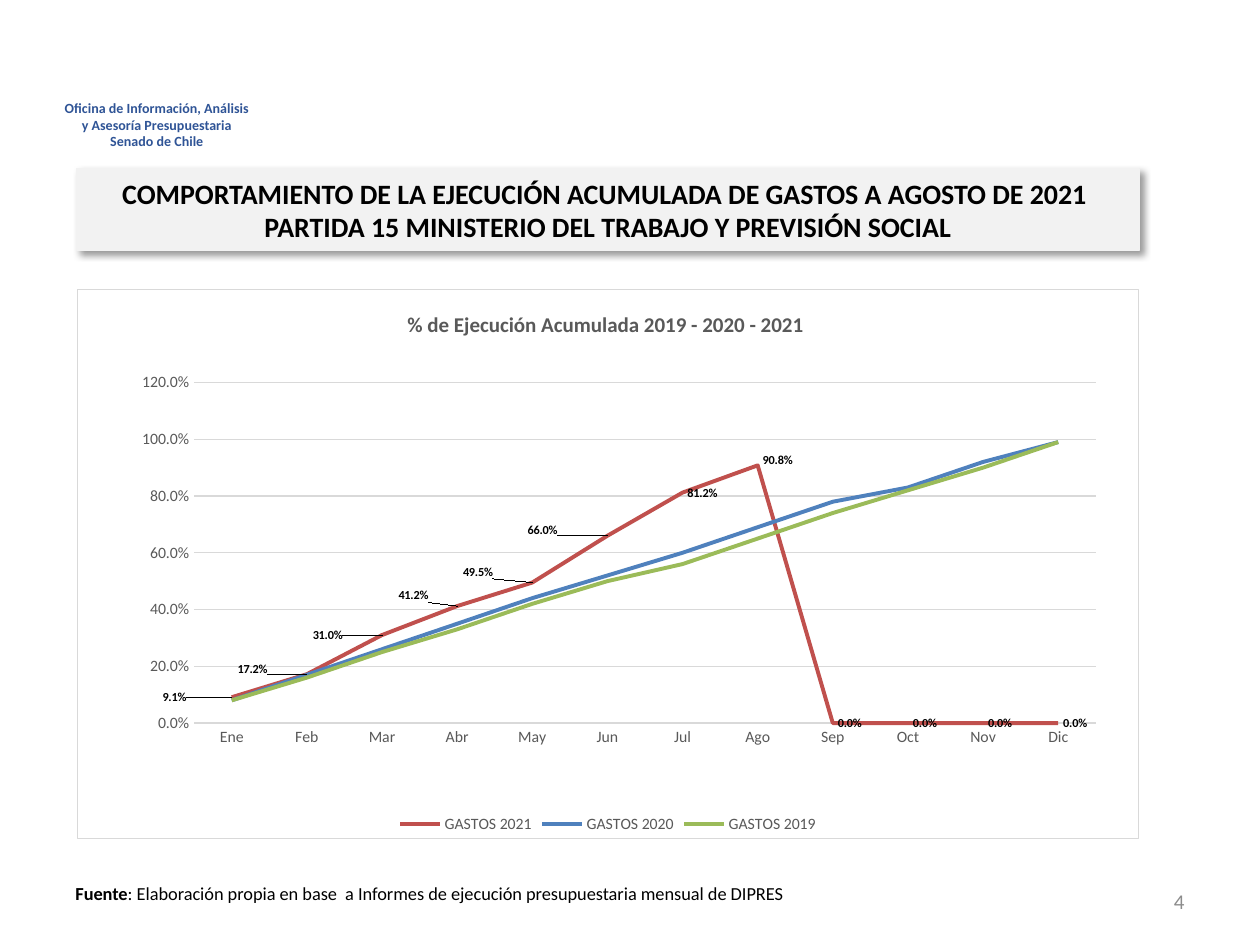
from dataclasses import dataclass

from lxml.etree import SubElement
from pptx import Presentation
from pptx.chart.data import CategoryChartData
from pptx.dml.color import RGBColor
from pptx.enum.chart import XL_CHART_TYPE, XL_LABEL_POSITION, XL_LEGEND_POSITION, XL_TICK_MARK
from pptx.enum.text import MSO_ANCHOR, MSO_AUTO_SIZE, PP_ALIGN
from pptx.oxml import parse_xml
from pptx.oxml.ns import nsdecls, qn
from pptx.util import Inches, Pt

COLORS = {
    "white": "FFFFFF", "black": "000000", "navy": "2F5496", "banner": "F2F2F2",
    "number": "8C8C8C", "label": "595959", "grid": "D9D9D9",
    "red": "C0504D", "blue": "4F81BD", "green": "9BBB59",
}
MONTHS = "Ene Feb Mar Abr May Jun Jul Ago Sep Oct Nov Dic".split()


@dataclass(frozen=True)
class Spending:
    year: int
    color: str
    values: tuple


@dataclass(frozen=True)
class LabelShift:
    month: int
    x: float
    y: float


SPENDING = (
    Spending(2021, "red", (0.091, 0.172, 0.31, 0.412, 0.495, 0.66, 0.812, 0.908) + (None,) * 4),
    Spending(2020, "blue", (0.08, 0.17, 0.26, 0.35, 0.44, 0.52, 0.6, 0.69, 0.78, 0.83, 0.92, 0.99)),
    Spending(2019, "green", (0.08, 0.16, 0.25, 0.33, 0.42, 0.5, 0.56, 0.65, 0.74, 0.82, 0.9, 0.99)),
)
LABEL_SHIFTS = (
    LabelShift(0, -0.07, 0), LabelShift(1, -0.07, -0.01), LabelShift(2, -0.07, 0),
    LabelShift(3, -0.06, -0.02), LabelShift(4, -0.07, -0.02), LabelShift(5, -0.08, -0.01),
    LabelShift(7, 0, -0.01),
)


def rgb(name: str) -> RGBColor:
    return RGBColor.from_string(COLORS[name])


def set_font(font, size: float, color: str, bold: bool = False) -> None:
    font.name, font.size, font.bold = "Calibri", Pt(size), bold
    font.color.rgb = rgb(color)


def set_line(line, color: str, width: float = 0.75) -> None:
    line.color.rgb = rgb(color)
    line.width = Pt(width)


def place(shape, left: float, top: float, width: float, height: float) -> None:
    shape.left, shape.top = Inches(left), Inches(top)
    shape.width, shape.height = Inches(width), Inches(height)


def add_text(page, left: float, top: float, width: float, height: float):
    box = page.shapes.add_textbox(Inches(left), Inches(top), Inches(width), Inches(height))
    box.text_frame.word_wrap = True
    return box.text_frame


def add_office_name(page) -> None:
    frame = add_text(page, 0.39, 0.74, 1.71, 0.5)
    frame.text = "Oficina de Información, Análisis y Asesoría Presupuestaria\nSenado de Chile"
    for paragraph in frame.paragraphs:
        paragraph.alignment = PP_ALIGN.CENTER
        set_font(paragraph.font, 8, "navy", bold=True)


def format_title(title) -> None:
    place(title, 0.61, 1.34, 8.43, 0.65)
    title.fill.solid()
    title.fill.fore_color.rgb = rgb("banner")
    set_line(title.line, "banner")
    title._element.spPr.append(parse_xml(
        f'<a:effectLst {nsdecls("a")}><a:outerShdw blurRad="{Pt(4)}" dist="{Pt(3)}" '
        f'dir="2700000" algn="tl" rotWithShape="0"><a:srgbClr val="{COLORS["black"]}">'
        '<a:alpha val="40000"/></a:srgbClr></a:outerShdw></a:effectLst>'))
    frame = title.text_frame
    frame.text = ("COMPORTAMIENTO DE LA EJECUCIÓN ACUMULADA DE GASTOS A AGOSTO DE 2021 \v"
                  "PARTIDA 15 MINISTERIO DEL TRABAJO Y PREVISIÓN SOCIAL")
    frame.auto_size = MSO_AUTO_SIZE.NONE
    frame.vertical_anchor = MSO_ANCHOR.MIDDLE
    frame.paragraphs[0].alignment = PP_ALIGN.CENTER
    set_font(frame.paragraphs[0].font, 16, "black", bold=True)


def manual_layout(**settings):
    layout = parse_xml(f'<c:layout {nsdecls("c")}><c:manualLayout/></c:layout>')
    for tag, value in settings.items():
        SubElement(layout[0], qn(f"c:{tag}")).set("val", str(value))
    return layout


def format_axes(chart) -> None:
    for axis in (chart.category_axis, chart.value_axis):
        axis.major_tick_mark = axis.minor_tick_mark = XL_TICK_MARK.NONE
        set_font(axis.tick_labels.font, 9, "label")
    set_line(chart.category_axis.format.line, "grid")
    values = chart.value_axis
    values.minimum_scale, values.maximum_scale, values.major_unit = 0, 1.2, 0.2
    values.format.line.fill.background()
    set_line(values.major_gridlines.format.line, "grid")
    values.tick_labels.number_format = "0.0%"
    values.tick_labels.number_format_is_linked = False


def hide_leader_lines(series) -> None:
    group = series._element.find(qn("c:dLbls"))
    for leader in group.findall(qn("c:showLeaderLines")):
        group.remove(leader)
    group.append(parse_xml(
        f'<c:extLst {nsdecls("c")}><c:ext uri="{{CE6537A1-D6FC-4f65-9D91-7224C49458BB}}" '
        'xmlns:c15="http://schemas.microsoft.com/office/drawing/2012/chart">'
        '<c15:showLeaderLines val="0"/></c:ext></c:extLst>'))


def label_series(series) -> None:
    labels = series.data_labels
    labels.show_value = True
    labels.number_format, labels.number_format_is_linked = "0.0%", False
    labels.position = XL_LABEL_POSITION.RIGHT
    set_font(labels.font, 7, "black", bold=True)
    for shift in LABEL_SHIFTS:
        label = series.points[shift.month].data_label
        set_font(label.font, 7, "black", bold=True)
        label.position = XL_LABEL_POSITION.RIGHT
    by_month = {item.find(qn("c:idx")).get("val"): item
                for item in series._element.iter(qn("c:dLbl"))}
    for shift in LABEL_SHIFTS:
        by_month[str(shift.month)].insert(1, manual_layout(x=shift.x, y=shift.y))
    hide_leader_lines(series)


def add_spending_chart(page) -> None:
    data = CategoryChartData(number_format="0.0%")
    data.categories = MONTHS
    for spending in SPENDING:
        data.add_series(f"GASTOS {spending.year}", spending.values)
    chart = page.shapes.add_chart(
        XL_CHART_TYPE.LINE, Inches(0.61), Inches(2.29), Inches(8.43), Inches(4.37), data).chart
    set_font(chart.font, 10, "black")
    chart.has_title = True
    chart.chart_title.include_in_layout = False
    heading = chart.chart_title.text_frame
    heading.text = "% de Ejecución Acumulada 2019 - 2020 - 2021 "
    set_font(heading.paragraphs[0].font, 12, "label", bold=True)
    chart.has_legend = True
    chart.legend.position = XL_LEGEND_POSITION.BOTTOM
    chart.legend.include_in_layout = False
    set_font(chart.legend.font, 9, "label")
    format_axes(chart)
    for spending, series in zip(SPENDING, chart.plots[0].series):
        series.smooth = False
        set_line(series.format.line, spending.color, 2.25)
    label_series(chart.plots[0].series[0])

    space = chart._chartSpace
    plot_area = space.chart.plotArea
    for layout in plot_area.findall(qn("c:layout")):
        plot_area.remove(layout)
    plot_area.insert(0, manual_layout(
        layoutTarget="inner", xMode="edge", yMode="edge", x=0.11, y=0.17, w=0.85, h=0.62))
    space.chart.find(qn("c:dispBlanksAs")).set("val", "zero")
    space.chart.addnext(parse_xml(
        f'<c:spPr {nsdecls("c", "a")}><a:solidFill><a:srgbClr val="{COLORS["white"]}"/>'
        f'</a:solidFill><a:ln w="{Pt(0.75)}"><a:solidFill><a:srgbClr val="{COLORS["grid"]}"/>'
        '</a:solidFill></a:ln></c:spPr>'))


def add_footer(page) -> None:
    source = add_text(page, 0.5, 6.95, 5.91, 0.28).paragraphs[0]
    set_font(source.font, 10.5, "black")
    source.add_run().text = "Fuente"
    source.runs[0].font.bold = True
    source.add_run().text = (
        ": Elaboración propia en base  a Informes de ejecución presupuestaria mensual de DIPRES")
    number = add_text(page, 7.17, 6.95, 2.33, 0.4)
    number.text = "4"
    number.vertical_anchor = MSO_ANCHOR.MIDDLE
    number.paragraphs[0].alignment = PP_ALIGN.RIGHT
    set_font(number.paragraphs[0].font, 12, "number")


def main() -> None:
    """Build the slide on accumulated spending and save it."""
    deck = Presentation()
    deck.slide_width, deck.slide_height = Inches(10), Inches(7.5)
    page = deck.slides.add_slide(deck.slide_layouts[5])
    add_office_name(page)
    format_title(page.shapes.title)
    add_spending_chart(page)
    add_footer(page)
    deck.save("out.pptx")


if __name__ == "__main__":
    main()
